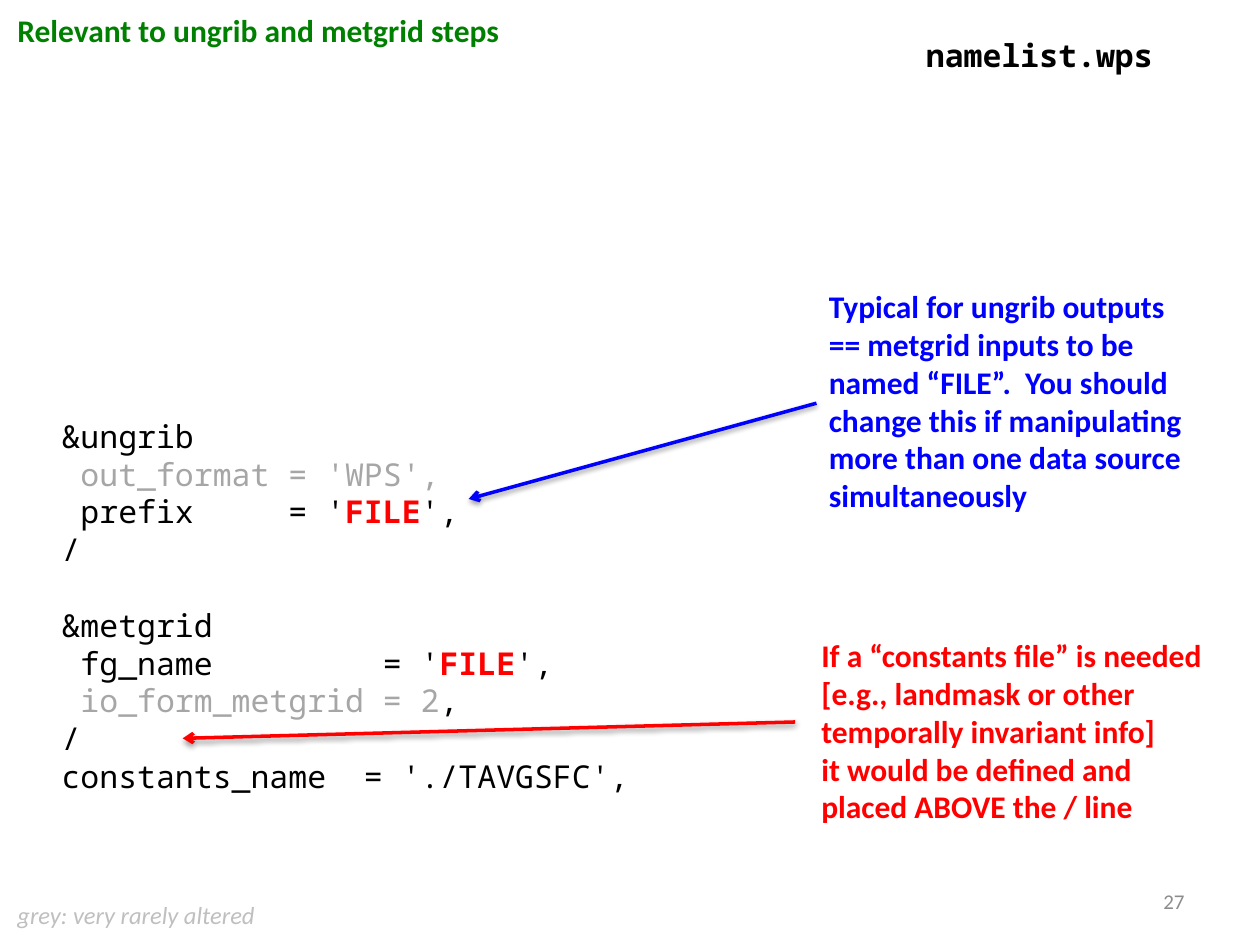
import pptx
import pptx.util
import pptx.dml.color
import pptx.enum.shapes
import pptx.enum.text
import pptx.oxml
import pptx.oxml.ns

Inches, Pt = pptx.util.Inches, pptx.util.Pt
Fit = pptx.enum.text.MSO_AUTO_SIZE
MONO, SANS = "Noto Sans Mono", "Calibri"

COLORS = {
    "black": "000000", "grey": "A6A6A6", "red": "FF0000", "blue": "0000FF",
    "green": "008000", "pale": "BFBFBF", "dim": "8C8C8C",
}

FILE = ("FILE", "red", True)
UNGRIB = [
    [("&ungrib", "black")],
    [(" ", "black"), ("out_format = 'WPS',", "grey")],
    [(" prefix     = '", "black"), FILE, ("',", "black")],
    [("/", "black")],
]
METGRID = [
    [("&metgrid", "black")],
    [(" fg_name         = '", "black"), FILE, ("',", "black")],
    [(" ", "black"), ("io_form_metgrid = 2", "grey"), (",", "black")],
    [("/", "black")],
    [("constants_name  = './TAVGSFC',", "black")],
]
PREFIX = [
    "Typical for ungrib outputs",
    "== metgrid inputs to be",
    "named “FILE”.  You should",
    "change this if manipulating",
    "more than one data source",
    "simultaneously",
]
CONST = [
    "If a “constants file” is needed",
    "[e.g., landmask or other",
    "temporally invariant info]",
    "it would be defined and placed ABOVE the / line",
]

NOTES = [
    (PREFIX, "blue", SANS, (6.48, 2.23, 3.03, 1.92), False),
    (CONST, "red", SANS, (6.42, 5, 3.25, 1.62), True),
    (["namelist.wps"], "black", MONO, (7.25, 0.24, 2.02, 0.4), False),
    (["Relevant to ungrib and metgrid steps"], "green", SANS,
     (0.04, 0.04, 4.06, 0.4), False),
]
ARROWS = [
    ("blue", (6.48, 3.2), (3.72, 3.96)),
    ("red", (6.31, 5.73), (1.45, 5.86)),
]
SHADOW = (
    '<a:effectLst %s><a:outerShdw blurRad="40000" dist="20000" dir="5400000"'
    ' rotWithShape="0"><a:srgbClr val="000000"><a:alpha val="38000"/>'
    '</a:srgbClr></a:outerShdw></a:effectLst>'
) % pptx.oxml.ns.nsdecls("a")
HEAD = '<a:tailEnd %s type="arrow"/>' % pptx.oxml.ns.nsdecls("a")


def paint(name):
    return pptx.dml.color.RGBColor.from_string(COLORS[name])


def add_text(slide, lines, box, font=SANS, size=18, wrap=False, italic=False):
    frame = slide.shapes.add_textbox(*map(Inches, box)).text_frame
    frame.word_wrap = wrap
    frame.auto_size = Fit.SHAPE_TO_FIT_TEXT
    for i, line in enumerate(lines):
        para = frame.add_paragraph() if i else frame.paragraphs[0]
        for text, color, bold in line:
            run = para.add_run()
            run.text = text
            run.font.name = font
            run.font.size = Pt(size)
            run.font.bold = bold
            run.font.italic = italic
            run.font.color.rgb = paint(color)
    return frame


def add_arrow(slide, color, start, end):
    line = slide.shapes.add_connector(
        pptx.enum.shapes.MSO_CONNECTOR.STRAIGHT, *map(Inches, start + end))
    line.line.color.rgb = paint(color)
    line.line.width = Pt(2)
    line.line._get_or_add_ln().append(pptx.oxml.parse_xml(HEAD))
    line._element.spPr.append(pptx.oxml.parse_xml(SHADOW))


def main():
    deck = pptx.Presentation()
    deck.slide_width, deck.slide_height = Inches(10), Inches(7.5)
    slide = deck.slides.add_slide(deck.slide_layouts[6])

    code = [[(run + (False,))[:3] for run in line] for line in UNGRIB + METGRID]
    frame = add_text(slide, code, (0.39, 3.26, 4.72, 3.13), MONO)
    frame.paragraphs[len(UNGRIB)].space_before = Pt(21.6)

    for arrow in ARROWS:
        add_arrow(slide, *arrow)
    for lines, color, font, box, wrap in NOTES:
        add_text(slide, [[(text, color, True)] for text in lines], box, font, wrap=wrap)

    page = add_text(slide, [[("27", "dim", False)]], (7.17, 6.95, 2.33, 0.4),
                    size=12, wrap=True)
    page.auto_size = Fit.NONE
    page.vertical_anchor = pptx.enum.text.MSO_ANCHOR.MIDDLE
    page.paragraphs[0].alignment = pptx.enum.text.PP_ALIGN.RIGHT
    add_text(slide, [[("grey: very rarely altered", "pale", False)]],
             (0.04, 7.09, 2.1, 0.34), size=14, italic=True)

    deck.save("out.pptx")


if __name__ == "__main__":
    main()
